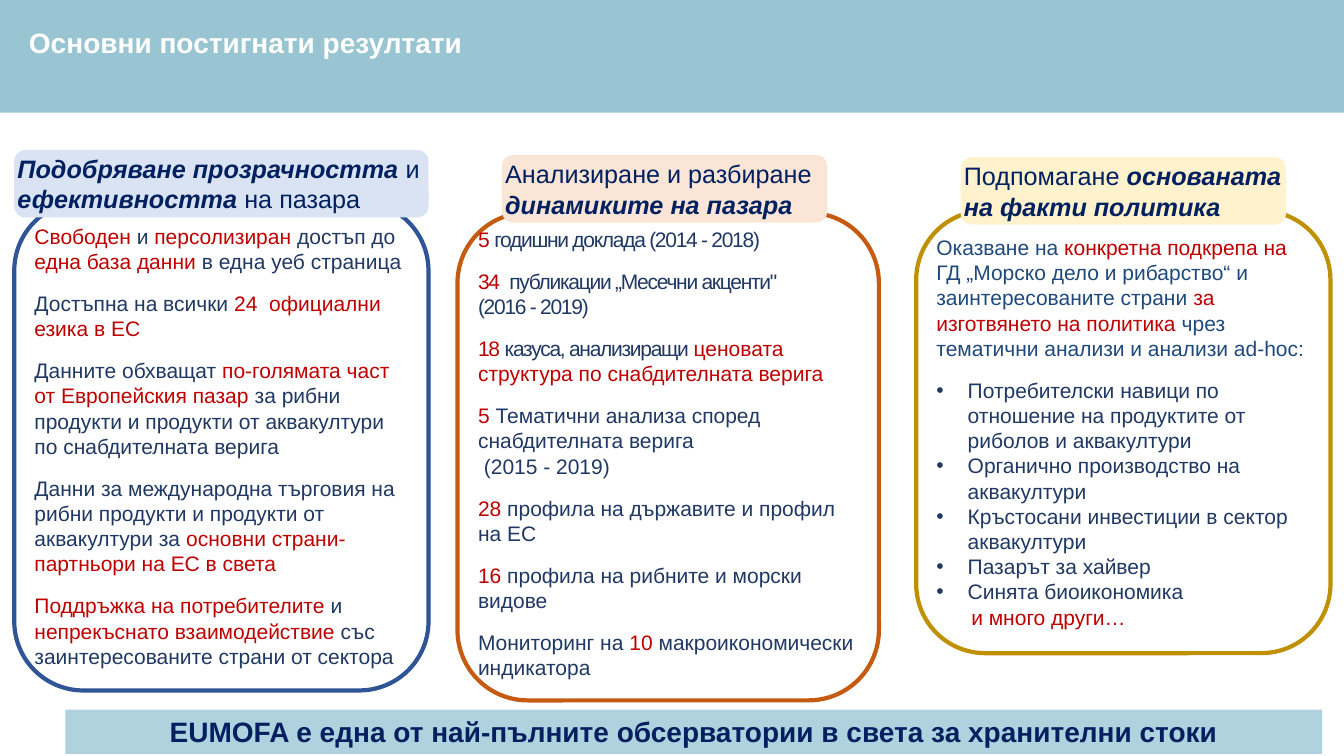
from dataclasses import dataclass

import pptx
import pptx.dml.color
import pptx.enum.shapes
import pptx.enum.text
import pptx.oxml
import pptx.oxml.ns
import pptx.util
from lxml import etree

Cm = pptx.util.Cm
Pt = pptx.util.Pt
Shape = pptx.enum.shapes.MSO_SHAPE
Align = pptx.enum.text.PP_ALIGN
Anchor = pptx.enum.text.MSO_ANCHOR
qn = pptx.oxml.ns.qn

FONT = "Arial"
COLOURS = {
    "band": "98C5D1", "footer": "B0D2DE", "white": "FFFFFF",
    "navy": "002060", "ink": "203864", "steel": "1F497D", "red": "C00000",
    "blue line": "2F5597", "orange line": "C55A11", "gold line": "BF9000",
    "blue tab": "DAE3F3", "orange tab": "FBE5D6", "gold tab": "FFF2CC",
}
STYLES = {
    "ink": {"colour": "ink"},
    "red": {"colour": "red"},
    "steel": {"colour": "steel"},
    "tight ink": {"colour": "ink", "tracking": -90},
    "tight red": {"colour": "red", "tracking": -90},
    "plain": {"colour": "navy"},
    "strong": {"colour": "navy", "bold": True, "italic": True},
    "title": {"colour": "white", "bold": True},
    "closing": {"colour": "navy", "bold": True},
}


@dataclass
class Paragraph:
    spans: list
    gap: float = 12
    left: float = 0
    bullet: bool = False


def colour(name):
    return pptx.dml.color.RGBColor.from_string(COLOURS[name])


def write(frame, paragraphs, size, align=Align.LEFT, anchor=Anchor.MIDDLE, inset=(0, 0)):
    """Fill a text frame; each span is a (text, style name) pair."""
    frame.word_wrap = True
    frame.auto_size = pptx.enum.text.MSO_AUTO_SIZE.NONE
    frame.vertical_anchor = anchor
    frame.margin_left = frame.margin_right = Cm(inset[0])
    frame.margin_top = frame.margin_bottom = Cm(inset[1])
    for index, item in enumerate(paragraphs):
        para = frame.add_paragraph() if index else frame.paragraphs[0]
        properties = para._p.get_or_add_pPr()
        if item.left:
            properties.set("marL", str(Cm(item.left)))
            properties.set("indent", str(-Cm(item.left) if item.bullet else 0))
        if item.bullet:
            etree.SubElement(properties, qn("a:buFont")).set("typeface", FONT)
            etree.SubElement(properties, qn("a:buChar")).set("char", "•")
        para.alignment = align
        para.space_before = Pt(item.gap if index else 0)
        for text, style in item.spans:
            for number, line in enumerate(text.split("\n")):
                if number:
                    para.add_line_break()
                add_span(para, line, size, **STYLES[style])


def add_span(para, text, size, colour, bold=False, italic=False, tracking=0):
    span = para.add_run()
    span.text = text
    span.font.name = FONT
    span.font.size = Pt(size)
    span.font.bold = bold
    span.font.italic = italic
    span.font.color.rgb = pptx.dml.color.RGBColor.from_string(COLOURS[colour])
    if tracking:
        span._r.get_or_add_rPr().set("spc", str(tracking))


def add_block(page, kind, box, fill=None, line=None):
    block = page.shapes.add_shape(kind, *map(Cm, box))
    block.shadow.inherit = False
    if fill:
        block.fill.solid()
        block.fill.fore_color.rgb = colour(fill)
    else:
        block.fill.background()
    if line:
        block.line.color.rgb = colour(line)
        block.line.width = Pt(3)
    else:
        block.line.fill.background()
    return block


def add_header(page, box, text):
    left, top, width, height = box
    band = add_block(page, Shape.RECTANGLE, box, fill="band")
    title = page.shapes.title
    title.element.addprevious(band.element)
    title.left, title.top = Cm(left + 0.48), Cm(top + 0.51)
    title.width, title.height = Cm(13.5), Cm(1.12)
    write(title.text_frame, [Paragraph([(text, "title")])], 20,
          anchor=Anchor.TOP, inset=(0.25, 0.13))


def add_column(page, box, hue, heading, body, tab_shift, tab_rise, tab_width, anchor):
    """Outlined panel with a heading tab over its top edge."""
    left, top, width, height = box
    panel = add_block(page, Shape.ROUNDED_RECTANGLE, box, line=hue + " line")
    write(panel.text_frame, body, 15, anchor=anchor)
    tab_box = (left + tab_shift, top - tab_rise, tab_width, 1.7)
    tab = add_block(page, Shape.ROUNDED_RECTANGLE, tab_box, fill=hue + " tab")
    write(tab.text_frame, [Paragraph(heading)], 18)


def add_footer(page, box, text):
    strip = add_block(page, Shape.RECTANGLE, box, fill="footer")
    write(strip.text_frame, [Paragraph([(text, "closing")])], 20,
          align=Align.CENTER, inset=(0.25, 0.13))


TRANSPARENCY = [
    Paragraph([("Свободен ", "red"), ("и", "ink"), (" персолизиран ", "red"),
               ("достъп до ", "ink"), ("една база данни ", "red"),
               ("в една уеб страница", "ink")]),
    Paragraph([("Достъпна на всички ", "ink"), ("24  официални езика в ЕС", "red")]),
    Paragraph([("Данните обхващат ", "ink"),
               ("по-голямата част от Европейския пазар ", "red"),
               ("за рибни продукти и продукти от аквакултури по снабдителната верига", "ink")]),
    Paragraph([("Данни за международна търговия на рибни продукти и продукти от "
                "аквакултури за ", "ink"),
               ("основни страни-партньори на ЕС в света", "red")]),
    Paragraph([("Поддръжка на потребителите ", "red"), ("и ", "ink"),
               ("непрекъснато взаимодействие ", "red"),
               ("със заинтересованите страни от сектора", "ink")]),
]
DYNAMICS = [
    Paragraph([("5 ", "tight red"), ("годишни доклада (2014 - 2018)", "tight ink")]),
    Paragraph([("34  ", "tight red"),
               ("публикации „Месечни акценти\"\n(2016 - 2019)", "tight ink")]),
    Paragraph([("18", "tight red"), (" казуса, анализиращи ", "tight ink"),
               ("ценовата структура по снабдителната верига", "red")]),
    Paragraph([("5 ", "red"),
               ("Тематични анализа според снабдителната верига\n (2015 - 2019)", "ink")]),
    Paragraph([("28 ", "red"), ("профила на държавите и профил на ЕС", "ink")]),
    Paragraph([("16 ", "red"), ("профила на рибните и морски видове", "ink")]),
    Paragraph([("Мониторинг на ", "ink"), ("10 ", "red"),
               ("макроикономически индикатора", "ink")]),
]
TOPICS = [
    "Потребителски навици по отношение на продуктите от риболов и аквакултури",
    "Органично производство на аквакултури",
    "Кръстосани инвестиции в сектор аквакултури",
    "Пазарът за хайвер",
    "Синята биоикономика",
]
POLICY = [
    Paragraph([("Оказване на ", "steel"), ("конкретна подкрепа на ", "red"),
               ("ГД „Морско дело и рибарство“ и заинтересованите страни ", "steel"),
               ("за изготвянето на политика ", "red"),
               ("чрез тематични анализи и анализи ad-hoc:", "steel")]),
    *[Paragraph([(topic, "ink")], gap=0 if index else 12, left=0.79, bullet=True)
      for index, topic in enumerate(TOPICS)],
    Paragraph([("и много други…", "red")], gap=0, left=0.88),
]


def main():
    deck = pptx.Presentation()
    deck.slide_width, deck.slide_height = Cm(33.87), Cm(19.05)
    page = deck.slides.add_slide(deck.slide_layouts.get_by_name("Title Only"))

    add_header(page, (0, 0, 33.87, 2.84), "Основни постигнати резултати")

    # Three result columns
    add_column(page, (0.36, 5.08, 10.44, 12.32), "blue",
               [("Подобряване прозрачността ", "strong"), ("и", "plain"),
                (" ефективността ", "strong"), ("на пазара", "plain")],
               TRANSPARENCY, 0, 1.3, 10.44, Anchor.MIDDLE)
    add_column(page, (11.53, 5.36, 10.62, 12.29), "orange",
               [("Анализиране и разбиране ", "plain"), ("динамиките на пазара", "strong")],
               DYNAMICS, 1.12, 1.45, 8.2, Anchor.BOTTOM)
    add_column(page, (23.09, 5.31, 10.44, 11.15), "gold",
               [("Подпомагане ", "plain"), ("основаната на факти политика", "strong")],
               POLICY, 1.12, 1.35, 8.2, Anchor.MIDDLE)

    add_footer(page, (1.65, 17.88, 31.67, 1.12),
               "EUMOFA е една от най-пълните обсерватории в света за хранителни стоки")
    deck.save("out.pptx")


if __name__ == "__main__":
    main()
